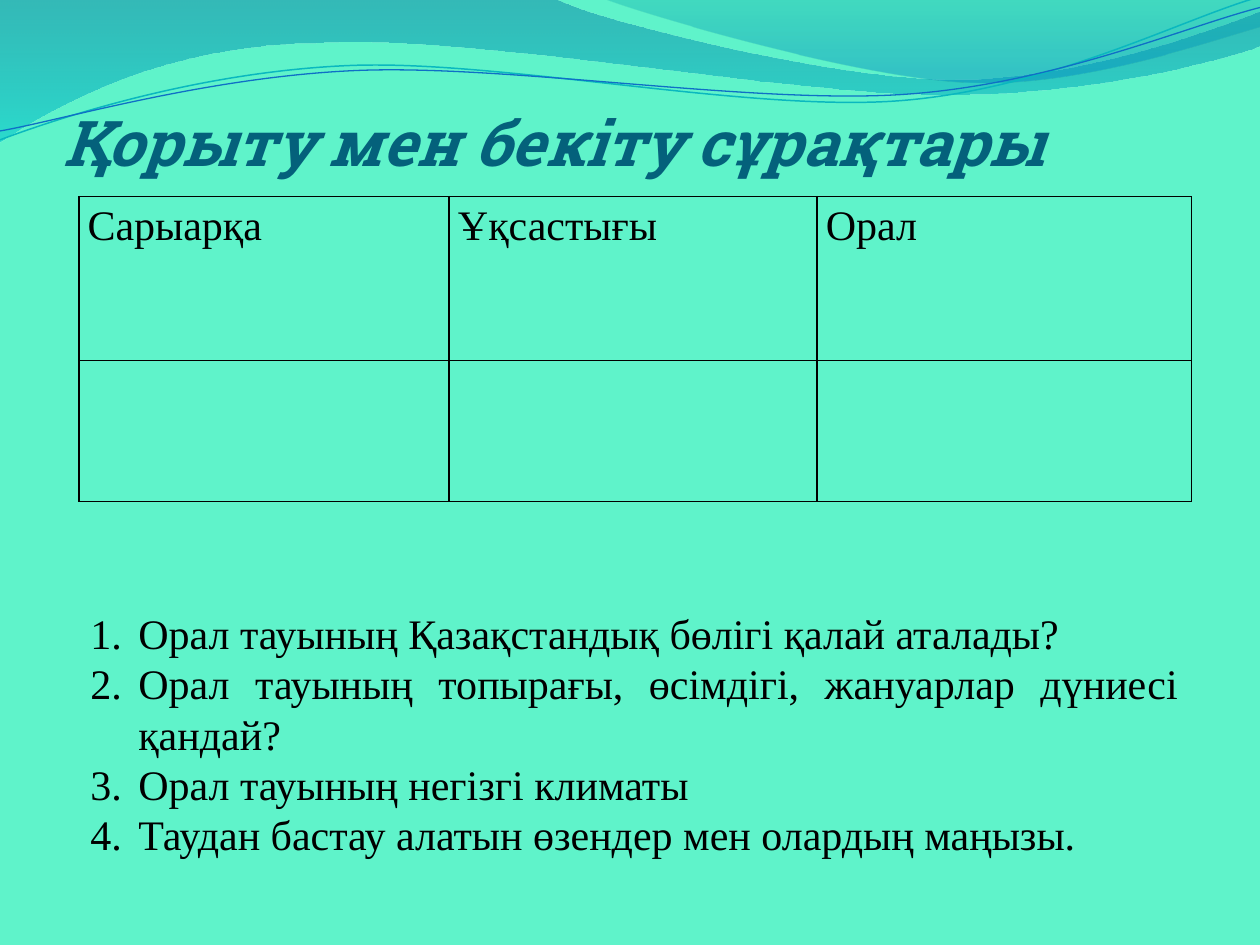
from math import cos, radians, sin

from pptx import Presentation
from pptx.dml.color import RGBColor
from pptx.enum.text import MSO_ANCHOR, MSO_AUTO_SIZE, PP_ALIGN
from pptx.oxml import parse_xml
from pptx.oxml.ns import nsdecls, qn
from pptx.oxml.xmlchemy import OxmlElement
from pptx.util import Inches, Pt

MINT = RGBColor(0x5F, 0xF3, 0xCA)
NAVY = RGBColor(0x04, 0x61, 0x7B)
BLACK = RGBColor(0, 0, 0)
DEEP = RGBColor(0x00, 0x74, 0xA1)
CYAN = RGBColor(0x00, 0xC6, 0xCF)
TEAL = RGBColor(0x00, 0xA1, 0xA9)
BLUE = RGBColor(0x00, 0x8B, 0xBF)
AQUA = RGBColor(0x0A, 0xB8, 0xBF)
ROYAL = RGBColor(0x0F, 0x6F, 0xC6)
SERIF = "Times New Roman"
TILT = -2.7


def draw_wave(shapes, path, closed):
    """Draw a path of points (2 numbers) and Bezier curves (6 numbers)."""
    start, *steps = path
    dots = [(Inches(s[i]), Inches(s[i + 1]))
            for s in steps for i in range(0, len(s), 2)]
    pen = shapes.build_freeform(Inches(start[0]), Inches(start[1]))
    pen.add_line_segments(dots, close=closed)
    wave = pen.convert_to_shape()
    wave.shadow.inherit = False
    # Join each three segments of a curve into one Bezier command
    lines = wave.element.spPr.findall(".//" + qn("a:lnTo"))
    for step in steps:
        group, lines = lines[:len(step) // 2], lines[len(step) // 2:]
        if len(group) == 3:
            curve = OxmlElement("a:cubicBezTo")
            group[0].addprevious(curve)
            for line in group:
                curve.append(line[0])
                line.getparent().remove(line)
    return wave


prs = Presentation()
prs.slide_width, prs.slide_height = Inches(10), Inches(7.5)
slide = prs.slides.add_slide(prs.slide_layouts[5])
shapes = slide.shapes
slide.background.fill.solid()
slide.background.fill.fore_color.rgb = MINT

# Shaded waves: path, then (position, colour, opacity in percent) per stop
bands = [
    ([(0, -0.01), (4.4, -0.01), (4.76, 0.17, 6.64, 0.63, 7.58, 0.63),
      (8.53, 0.63, 9.58, 0.26, 10, 0.09), (10.01, 0.36),
      (9.83, 0.44, 8.7, 0.76, 7.46, 0.75), (6.22, 0.75, 3.82, 0.28, 2.57, 0.34),
      (1.29, 0.35, 0.46, 0.83, -0.01, 1.13), (0, -0.01)],
     [(0, DEEP, 45), (1, CYAN, 55)]),
    ([(4.79, -0.01), (5.09, 0.11, 6.82, 0.62, 7.69, 0.65),
      (8.56, 0.69, 9.61, 0.32, 10, 0.21), (10, 0), (4.79, -0.01)],
     [(0, TEAL, 30), (0.8, BLUE, 45)]),
]
for path, stops in bands:
    band = draw_wave(shapes, path, True)
    band.line.fill.background()
    band.fill.gradient()
    band.fill.gradient_angle = 270
    for stop, (place, color, _) in zip(band.fill.gradient_stops, stops):
        stop.position = place
        stop.color.rgb = color
    tints = band.element.spPr.iter(qn("a:srgbClr"))
    for tint, (_, _, shade) in zip(tints, stops):
        alpha = OxmlElement("a:alpha")
        alpha.set("val", str(shade * 1000))
        tint.append(alpha)

# Thin wave lines: level path, turned by the tilt around its middle
threads = [
    ([(0, 1.11), (0.48, 0.93, 1.58, 0.57, 2.77, 0.52),
      (3.95, 0.47, 5.93, 0.89, 7.13, 0.8), (8.33, 0.71, 9.38, 0.15, 9.98, -0.02)],
     (4.99, 0.58), AQUA, 0.85),
    ([(0, 1.04), (0.47, 0.96, 1.64, 0.61, 2.83, 0.56),
      (4.03, 0.51, 5.97, 0.83, 7.17, 0.75), (8.36, 0.67, 9.41, 0.21, 10, 0.06)],
     (5, 0.59), ROYAL, 0.75),
]
c, s = cos(radians(TILT)), sin(radians(TILT))
for path, (mx, my), color, width in threads:
    level = []
    for step in path:
        flat = []
        for x, y in zip(step[::2], step[1::2]):
            flat += [mx + (x - mx) * c + (y - my) * s,
                     my - (x - mx) * s + (y - my) * c]
        level.append(flat)
    thread = draw_wave(shapes, level, False)
    thread.rotation = TILT
    thread.fill.background()
    thread.line.color.rgb = color
    thread.line.width = Pt(width)

# Title, brought in front of the waves
title = shapes.title
title.element.getparent().append(title.element)
title.left, title.top = Inches(0.5), Inches(0.77)
title.width, title.height = Inches(9), Inches(1.25)
frame = title.text_frame
frame.text = "Қорыту мен бекіту сұрақтары"
frame.vertical_anchor = MSO_ANCHOR.BOTTOM
frame.auto_size = MSO_AUTO_SIZE.NONE
frame.margin_left = frame.margin_right = 0
frame.margin_top, frame.margin_bottom = Inches(0.05), Inches(0.6)
para = frame.paragraphs[0]
para.alignment = PP_ALIGN.LEFT
para.font.name, para.font.size = "Roboto Slab", Pt(36)
para.font.bold = para.font.italic = True
para.font.color.rgb = NAVY

# Comparison table
heads = ["Сарыарқа", "Ұқсастығы", "Орал"]
table = shapes.add_table(2, 3, Inches(0.625), Inches(1.56),
                         Inches(8.83), Inches(2.42)).table
table.first_row = table.horz_banding = False
for col, width in zip(table.columns, [2.94, 2.92, 2.97]):
    col.width = Inches(width)
for row, height in zip(table.rows, [1.3, 1.12]):
    row.height = Inches(height)
for cell in table.iter_cells():
    cell.fill.background()
    cell.margin_left = cell.margin_right = Inches(0.07)
    cell.margin_top = cell.margin_bottom = 0
    for i, side in enumerate(["lnL", "lnR", "lnT", "lnB"]):
        edge = parse_xml(
            f'<a:{side} {nsdecls("a")} w="{Pt(1)}"><a:solidFill>'
            f'<a:srgbClr val="{BLACK}"/></a:solidFill></a:{side}>')
        cell._tc.get_or_add_tcPr().insert(i, edge)
for i, head in enumerate(heads):
    cell = table.cell(0, i)
    cell.text = head
    para = cell.text_frame.paragraphs[0]
    para.alignment = PP_ALIGN.JUSTIFY
    para.line_spacing = 1.15
    para.font.name, para.font.size = SERIF, Pt(24)
    para.font.color.rgb = BLACK

# Numbered questions
asks = [
    "Орал тауының Қазақстандық бөлігі қалай аталады?",
    "Орал тауының топырағы, өсімдігі, жануарлар дүниесі қандай?",
    "Орал тауының негізгі климаты",
    "Таудан бастау алатын өзендер мен олардың маңызы.",
]
box = shapes.add_textbox(Inches(0.62), Inches(4.76), Inches(8.83), Inches(2.12))
frame = box.text_frame
frame.word_wrap = True
frame.auto_size = MSO_AUTO_SIZE.SHAPE_TO_FIT_TEXT
frame.vertical_anchor = MSO_ANCHOR.MIDDLE
frame.text = "\n".join(asks)
for para in frame.paragraphs:
    para.alignment = PP_ALIGN.JUSTIFY
    para.font.name, para.font.size = SERIF, Pt(24)
    para.font.color.rgb = BLACK
    props = para._p.get_or_add_pPr()
    props.set("marL", str(Inches(0.38)))
    props.set("indent", str(-Inches(0.38)))
    props.insert(0, parse_xml(f'<a:buAutoNum {nsdecls("a")} type="arabicPeriod"/>'))

prs.save("out.pptx")
